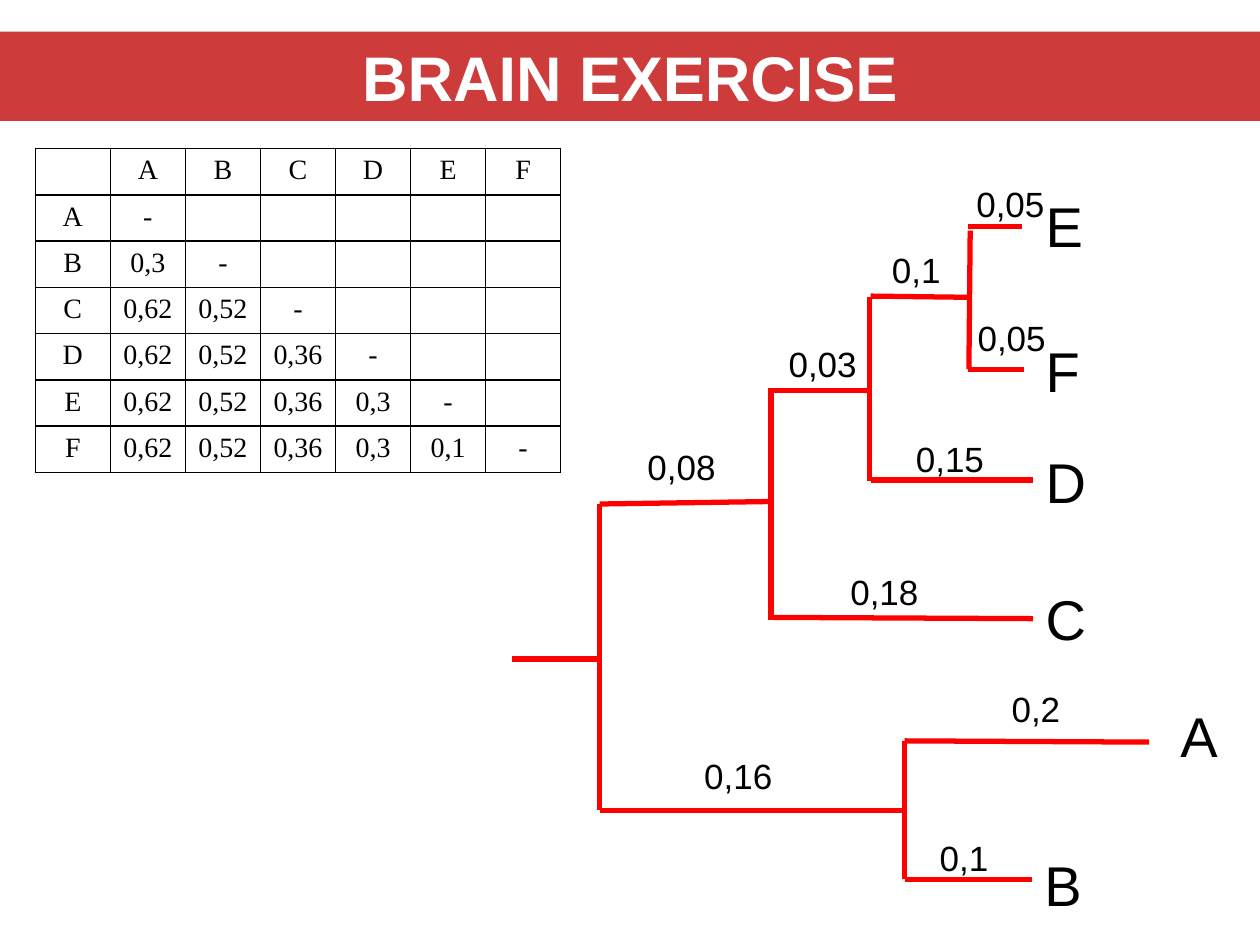
import dataclasses

import lxml.etree
import pptx
import pptx.dml.color
import pptx.enum.shapes
import pptx.enum.text
import pptx.oxml.ns
import pptx.util

Inches = pptx.util.Inches
qn = pptx.oxml.ns.qn


@dataclasses.dataclass(frozen=True)
class Theme:
    band: str = "C00000"
    band_opacity: int = 77
    title_text: str = "FFFFFF"
    text: str = "000000"
    branch: str = "FF0000"
    border: str = "000000"
    font: str = "Arial"
    table_font: str = "Times New Roman"
    title_size: int = 36
    leaf_size: int = 32
    length_size: int = 20
    table_size: int = 16
    branch_width: int = 3
    border_width: int = 1


def color(value):
    return pptx.dml.color.RGBColor.from_string(value)


def write_text(text_frame, text, *, font, size, fill, bold=False, align=None):
    paragraph = text_frame.paragraphs[0]
    paragraph.alignment = align
    run = paragraph.add_run()
    run.text = text
    run.font.name = font
    run.font.size = pptx.util.Pt(size)
    run.font.bold = bold
    run.font.color.rgb = color(fill)


class SlideBuilder:
    def __init__(self, slide, theme):
        self.slide = slide
        self.theme = theme

    def title(self, text, left, top, width, height):
        theme = self.theme
        shape = self.slide.shapes.title
        shape.left, shape.top = Inches(left), Inches(top)
        shape.width, shape.height = Inches(width), Inches(height)
        shape.fill.solid()
        shape.fill.fore_color.rgb = color(theme.band)
        band_color = shape.fill._xPr.find(qn("a:solidFill"))[0]
        alpha = lxml.etree.SubElement(band_color, qn("a:alpha"))
        alpha.set("val", str(theme.band_opacity * 1000))
        shape.text_frame.vertical_anchor = pptx.enum.text.MSO_ANCHOR.MIDDLE
        write_text(shape.text_frame, text, font=theme.font, size=theme.title_size,
                   fill=theme.title_text, bold=True,
                   align=pptx.enum.text.PP_ALIGN.CENTER)

    def table(self, rows, left, top, width, height):
        count = len(rows)
        table = self.slide.shapes.add_table(
            count, len(rows[0]), Inches(left), Inches(top),
            Inches(width), Inches(height)).table
        table.first_row = False
        table.horz_banding = False
        for row_index, row in enumerate(rows):
            for column_index, text in enumerate(row):
                self.cell(table.cell(row_index, column_index), text)

    def cell(self, cell, text):
        theme = self.theme
        cell.margin_top, cell.margin_bottom = Inches(0.05), 0
        cell.margin_left = cell.margin_right = Inches(0.05)
        properties = cell._tc.get_or_add_tcPr()
        for side in ("L", "R", "T", "B"):
            line = lxml.etree.SubElement(properties, qn(f"a:ln{side}"))
            line.set("w", str(pptx.util.Pt(theme.border_width)))
            fill = lxml.etree.SubElement(line, qn("a:solidFill"))
            lxml.etree.SubElement(fill, qn("a:srgbClr")).set("val", theme.border)
        cell.fill.background()
        if text:
            write_text(cell.text_frame, text, font=theme.table_font,
                       size=theme.table_size, fill=theme.text,
                       align=pptx.enum.text.PP_ALIGN.CENTER)

    def branch(self, start_x, start_y, end_x, end_y):
        connector = self.slide.shapes.add_connector(
            pptx.enum.shapes.MSO_CONNECTOR.STRAIGHT,
            Inches(start_x), Inches(start_y), Inches(end_x), Inches(end_y))
        connector.line.color.rgb = color(self.theme.branch)
        connector.line.width = pptx.util.Pt(self.theme.branch_width)
        lxml.etree.SubElement(connector._element.spPr, qn("a:effectLst"))

    def label(self, text, left, top, width, height, size):
        shape = self.slide.shapes.add_textbox(
            Inches(left), Inches(top), Inches(width), Inches(height))
        shape.text_frame.word_wrap = False
        write_text(shape.text_frame, text, font=self.theme.font, size=size,
                   fill=self.theme.text)

    def leaf(self, text, left, top, width):
        self.label(text, left, top, width, 0.64, self.theme.leaf_size)

    def length(self, text, left, top):
        width = 0.75 if len(text) == 4 else 0.59
        self.label(text, left, top, width, 0.44, self.theme.length_size)


TAXA = "ABCDEF"
DISTANCES = [
    [],
    ["0,3"],
    ["0,62", "0,52"],
    ["0,62", "0,52", "0,36"],
    ["0,62", "0,52", "0,36", "0,3"],
    ["0,62", "0,52", "0,36", "0,3", "0,1"],
]
BRANCHES = [
    (4.06, 5.23, 4.77, 5.23),
    (4.76, 4, 4.76, 6.43),
    (4.76, 4, 6.14, 3.98),
    (4.76, 6.43, 7.18, 6.43),
    (6.12, 3.08, 6.12, 4.92),
    (6.11, 3.1, 6.9, 3.1),
    (6.14, 4.9, 8.2, 4.91),
    (6.9, 2.36, 6.9, 3.82),
    (6.91, 2.35, 7.71, 2.36),
    (6.91, 3.81, 8.2, 3.81),
    (7.7, 1.83, 7.69, 2.93),
    (7.68, 1.8, 8.11, 1.8),
    (7.68, 2.93, 8.13, 2.93),
    (7.18, 5.88, 7.18, 6.98),
    (7.18, 5.88, 9.12, 5.89),
    (7.18, 6.98, 8.19, 6.98),
]
LEAVES = [
    ("E", 8.2, 1.47, 0.5),
    ("F", 8.2, 2.62, 0.48),
    ("D", 8.2, 3.5, 0.53),
    ("C", 8.2, 4.59, 0.53),
    ("A", 9.27, 5.52, 0.5),
    ("B", 8.19, 6.7, 0.5),
]
LENGTHS = [
    ("0,05", 7.65, 1.4),
    ("0,1", 6.98, 1.92),
    ("0,05", 7.66, 2.46),
    ("0,03", 6.16, 2.67),
    ("0,15", 7.17, 3.42),
    ("0,08", 5.04, 3.49),
    ("0,18", 6.65, 4.48),
    ("0,2", 7.93, 5.41),
    ("0,16", 5.49, 5.94),
    ("0,1", 7.36, 6.59),
]


def distance_rows():
    rows = [["", *TAXA]]
    for name, distances in zip(TAXA, DISTANCES):
        blanks = [""] * (len(TAXA) - len(distances) - 1)
        rows.append([name, *distances, "-", *blanks])
    return rows


def main():
    presentation = pptx.Presentation()
    presentation.slide_width = Inches(10)
    presentation.slide_height = Inches(7.5)
    slide = presentation.slides.add_slide(presentation.slide_layouts[5])
    builder = SlideBuilder(slide, Theme())
    builder.title("BRAIN EXERCISE", 0, 0.25, 10, 0.71)
    builder.table(distance_rows(), 0.28, 1.18, 4.17, 2.57)
    for branch in BRANCHES:
        builder.branch(*branch)
    for leaf in LEAVES:
        builder.leaf(*leaf)
    for length in LENGTHS:
        builder.length(*length)
    presentation.save("out.pptx")


if __name__ == "__main__":
    main()
